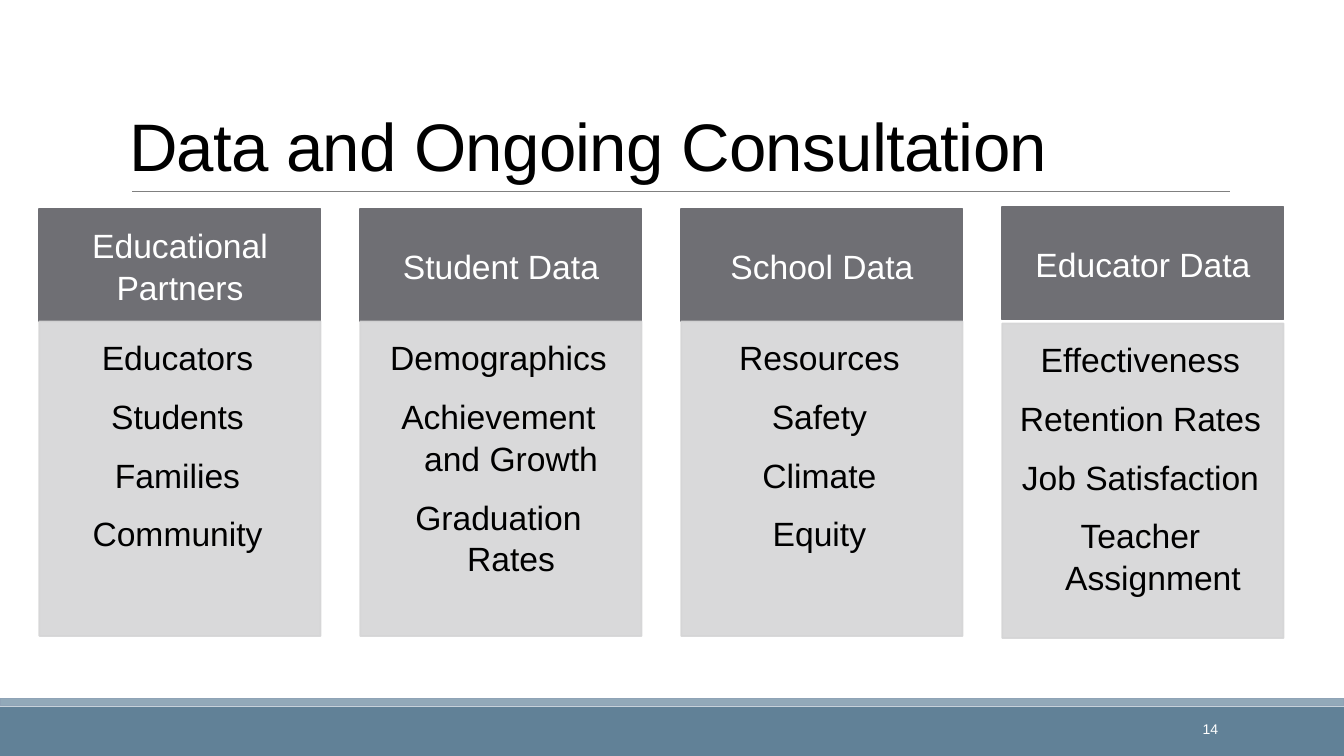
from dataclasses import dataclass

from lxml.etree import SubElement
from pptx import Presentation
from pptx.dml.color import RGBColor
from pptx.enum.shapes import MSO_CONNECTOR, MSO_SHAPE
from pptx.enum.text import MSO_ANCHOR, MSO_AUTO_SIZE, PP_ALIGN
from pptx.oxml.ns import qn
from pptx.util import Inches, Pt


@dataclass(frozen=True)
class Theme:
    font: str = "Arial"
    ink: str = "000000"
    paper: str = "FFFFFF"
    header: str = "6F6F74"
    panel: str = "D5D5D6"
    band: str = "618197"
    strip: str = "92A9B9"
    strip_line: str = "8FA3B6"
    rule: str = "808080"
    title_size: int = 48
    text_size: int = 24
    number_size: int = 10
    outline: float = 1.25
    panel_alpha: int = 90


T = Theme()
W, H = 13.33, 7.5
COLUMNS = [
    ("Educational Partners", ["Educators", "Students", "Families", "Community"]),
    ("Student Data", ["Demographics", "Achievement and Growth", "Graduation Rates"]),
    ("School Data", ["Resources", "Safety", "Climate", "Equity"]),
    ("Educator Data", ["Effectiveness", "Retention Rates", "Job Satisfaction",
                       "Teacher Assignment"]),
]


def rgb(color):
    return RGBColor.from_string(color)


def add_run(p, text, size, color):
    r = p.add_run()
    r.text = text
    r.font.name = T.font
    r.font.size = Pt(size)
    r.font.color.rgb = rgb(color)
    return r


def set_frame(tf, anchor, insets):
    tf.word_wrap = True
    tf.auto_size = MSO_AUTO_SIZE.NONE
    tf.vertical_anchor = anchor
    tf.margin_left, tf.margin_top, tf.margin_right, tf.margin_bottom = map(Inches, insets)


def add_rect(s, box, fill, line=None, alpha=100):
    sp = s.shapes.add_shape(MSO_SHAPE.RECTANGLE, *map(Inches, box))
    sp.shadow.inherit = False
    sp.fill.solid()
    sp.fill.fore_color.rgb = rgb(fill)
    if line:
        sp.line.color.rgb = rgb(line)
        sp.line.width = Pt(T.outline)
    else:
        sp.line.fill.background()
    if alpha < 100:
        for clr in sp._element.spPr.iter(qn("a:srgbClr")):
            SubElement(clr, qn("a:alpha")).set("val", str(alpha * 1000))
    return sp


def add_lines(tf, lines, color, indent=0):
    for i, text in enumerate(lines):
        p = tf.paragraphs[0] if i == 0 else tf.add_paragraph()
        p.alignment = PP_ALIGN.CENTER
        p.line_spacing = 1.04
        p.space_after = Pt(12)
        if indent:
            pPr = p._p.get_or_add_pPr()
            pPr.set("marL", str(Inches(indent)))
            pPr.set("indent", str(-Inches(indent)))
        add_run(p, text, T.text_size, color)


def add_title(s, box, text):
    title = s.shapes.title
    title.left, title.top, title.width, title.height = map(Inches, box)
    tf = title.text_frame
    set_frame(tf, MSO_ANCHOR.BOTTOM, (0.1, 0.05, 0.1, 0.05))
    p = tf.paragraphs[0]
    p.alignment = PP_ALIGN.LEFT
    p.line_spacing = 0.85
    r = add_run(p, text, T.title_size, T.ink)
    r.font._element.set("spc", "-50")

    left, top, width, height = box
    y = Inches(top + height + 0.01)
    rule = s.shapes.add_connector(MSO_CONNECTOR.STRAIGHT, Inches(left + 0.13), y,
                                  Inches(left + width + 0.02), y)
    rule.line.color.rgb = rgb(T.rule)
    rule.line.width = Pt(0.5)
    SubElement(rule._element.spPr, qn("a:effectLst"))


def add_column(s, box, heading, items, spread=0):
    left, top, width, height = box
    head_h = 0.264 * height
    head = add_rect(s, (left, top - spread, width, head_h), T.header, T.header)
    set_frame(head.text_frame, MSO_ANCHOR.MIDDLE, (0.19, 0.11, 0.19, 0.11))
    add_lines(head.text_frame, [heading], T.paper)

    body = add_rect(s, (left, top + head_h + spread, width, height - head_h),
                    T.panel, T.panel, T.panel_alpha)
    set_frame(body.text_frame, MSO_ANCHOR.TOP, (0.14, 0.14, 0.19, 0.21))
    add_lines(body.text_frame, items, T.ink, indent=0.25)


def add_columns(s, box, columns):
    left, top, width, height = box
    col_w = 2.79
    pitch = (width - col_w) / (len(columns) - 1)
    for i, (heading, items) in enumerate(columns):
        spread = 0.02 if i == len(columns) - 1 else 0
        add_column(s, (left + i * pitch, top, col_w, height), heading, items, spread)


def add_footer(s, box, number):
    left, top, width, height = box
    strip_h = 0.08
    add_rect(s, (left, top + strip_h, width, height - strip_h), T.band)
    add_rect(s, (left, top, width, strip_h - 0.01), T.strip, T.strip_line)
    sp = s.shapes.add_textbox(Inches(left + 10.74), Inches(top + 0.1),
                              Inches(1.44), Inches(0.4))
    set_frame(sp.text_frame, MSO_ANCHOR.MIDDLE, (0.1, 0.05, 0.1, 0.05))
    p = sp.text_frame.paragraphs[0]
    p.alignment = PP_ALIGN.RIGHT
    add_run(p, number, T.number_size, T.paper)


def main():
    prs = Presentation()
    prs.slide_width, prs.slide_height = Inches(W), Inches(H)
    s = prs.slides.add_slide(prs.slide_layouts.get_by_name("Title Only"))
    add_footer(s, (0, 6.93, W, H - 6.93), "14")
    add_title(s, (1.18, 0.3, 11, 1.59), "Data and Ongoing Consultation")
    add_columns(s, (0.39, 2.07, 12.34, 4.24), COLUMNS)
    prs.save("out.pptx")


if __name__ == "__main__":
    main()
